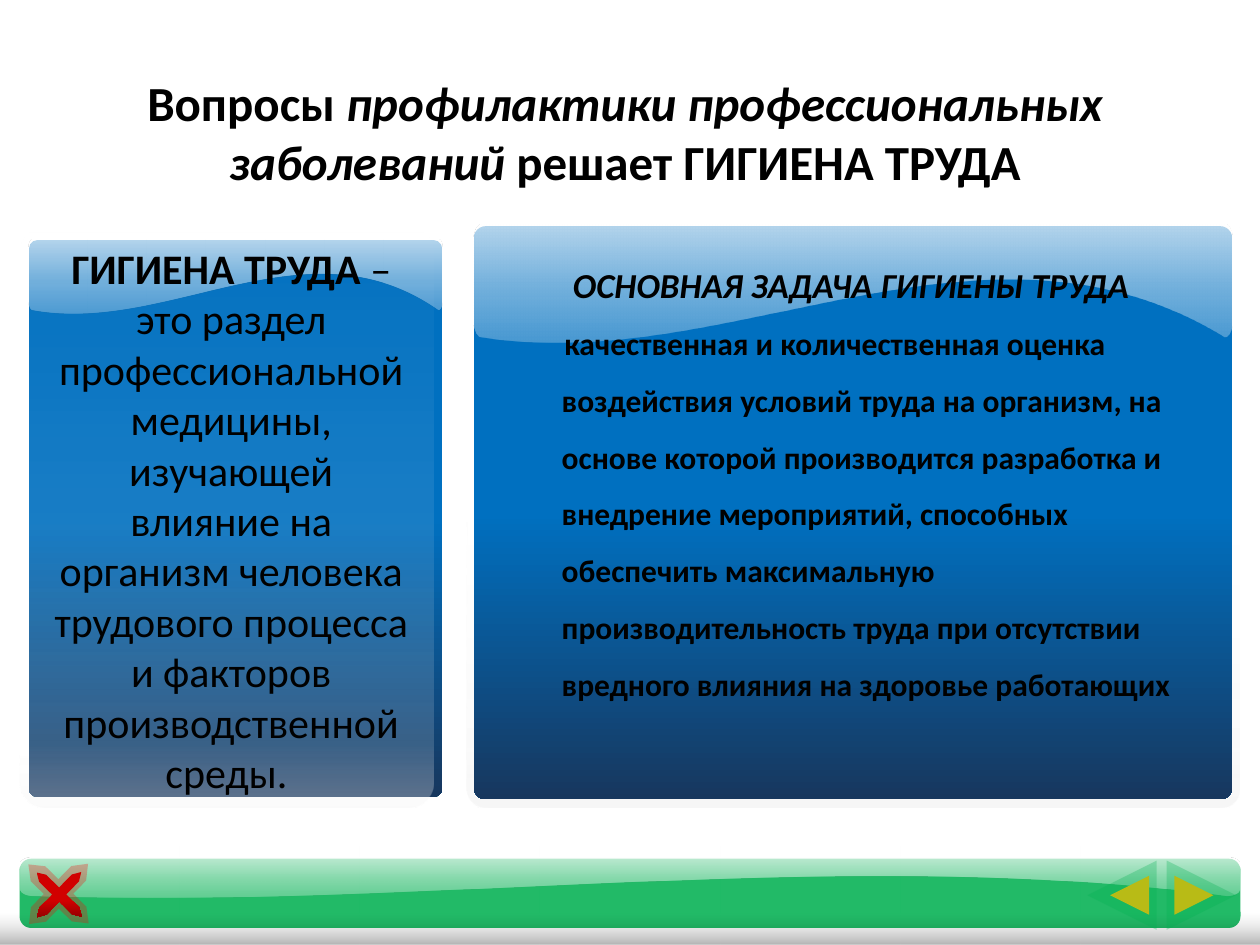
import pptx
import pptx.util
import pptx.dml.color
import pptx.enum.shapes
import pptx.enum.text
import pptx.oxml
import pptx.oxml.ns
from dataclasses import dataclass

KIND = pptx.enum.shapes.MSO_SHAPE
ALIGN = pptx.enum.text.PP_ALIGN
ANCHOR = pptx.enum.text.MSO_ANCHOR
FIT = pptx.enum.text.MSO_AUTO_SIZE


@dataclass(frozen=True)
class Theme:
    font: str = "Calibri"
    ink: str = "000000"
    white: str = "FFFFFF"
    mist: str = "F2F2F2"
    blue: str = "0070C0"
    navy: str = "17375E"
    green: str = "00B050"
    amber: str = "FFC000"
    red: str = "FF0000"
    dark_red: str = "C00000"
    title: int = 28
    definition: int = 24
    heading: int = 20
    body: int = 18


THEME = Theme()

TITLE = [[("Вопросы ", "b"), ("профилактики профессиональных заболеваний ", "bi"),
          ("решает ГИГИЕНА ТРУДА", "b")]]
DEFINITION = [[("ГИГИЕНА ТРУДА ", "b"),
               ("– это раздел профессиональной медицины, изучающей влияние на организм "
                "человека трудового процесса и факторов производственной среды. ", "")]]
TASK_HEADING = [("ОСНОВНАЯ ЗАДАЧА ГИГИЕНЫ ТРУДА", "bi")]
TASK = [("качественная и количественная оценка воздействия условий труда на организм, "
         "на основе которой производится разработка и внедрение мероприятий, способных "
         "обеспечить максимальную производительность труда при отсутствии вредного "
         "влияния на здоровье работающих", "b")]

COLUMNS, ROWS = 100, 75
PANEL_STOPS = [(50, THEME.blue, 100), (100, THEME.navy, 100)]
GLOSS_STOPS = [(0, THEME.white, 17), (50, THEME.white, 46), (100, THEME.white, 85)]
BAR_SHADE = [(0, THEME.white, 13), (68, THEME.white, 13), (100, THEME.ink, 29)]
TASK_HALO = [(0, THEME.white, 0), (50, THEME.white, 25), (100, THEME.mist, 59)]
DEFINITION_HALO = [(0, THEME.white, 0), (89, THEME.white, 16), (100, THEME.mist, 34)]
CROSS_STOPS = [(57, THEME.dark_red, 100), (100, THEME.ink, 100)]

BACKDROP = [
    (KIND.ROUNDED_RECTANGLE, (37, 17, 61.4, 47.1), [0.036], TASK_HALO, 90, 0),
    (KIND.ROUNDED_RECTANGLE, (2.3, 19.05, 32.8, 44.2), [0.021], PANEL_STOPS, 90, 0),
    (KIND.ROUNDED_RECTANGLE, (1.55, 68.15, 96.9, 5.5), [0.167], [(0, THEME.green, 100)], 0, 0),
    (KIND.RECTANGLE, (0, 67.2, 100, 7.8), [], BAR_SHADE, 90, 0),
]
BAR_GLOSS = (1.6, 68.1, 96.8, 3)
TASK_PANEL = (KIND.ROUNDED_RECTANGLE, (37.6, 17.95, 60.2, 45.5), [0.021], PANEL_STOPS, 90, 0)
PANEL_GLOSSES = [(37.6, 17.8, 60.2, 8.9), (2.3, 19, 32.8, 5.6)]
ARROW = [(0, THEME.amber, 100)]
ARROW_HALO = [(0, THEME.green, 28)]
CONTROLS = [
    (KIND.PENTAGON, (93.2, 69.5, 3.1, 3.1), [1.429], ARROW, 0, 0),
    (KIND.PENTAGON, (92.6, 68.3, 5.5, 5.5), [1.429], ARROW_HALO, 0, 0),
    (KIND.PENTAGON, (88.1, 69.5, 3.1, 3.1), [1.429], ARROW, 0, 180),
    (KIND.PENTAGON, (86.3, 68.3, 5.5, 5.5), [1.429], ARROW_HALO, 0, 180),
    (KIND.QUAD_ARROW, (2.2, 68.5, 5, 5), [0.246, 0.079, 0.132], CROSS_STOPS, 45, 44.4),
    (KIND.QUAD_ARROW, (1.3, 67.6, 6.7, 6.7), [0.246, 0.123, 0.159],
     [(0, THEME.red, 28)], 0, 44.4),
    (KIND.ROUNDED_RECTANGLE, (1.6, 18, 32.8, 46.1), [0.065], DEFINITION_HALO, 90, 0),
]

deck = pptx.Presentation()
deck.slide_width = pptx.util.Inches(10)
deck.slide_height = pptx.util.Inches(7.5)
slide = deck.slides.add_slide(deck.slide_layouts[5])


def across(columns):
    return round(deck.slide_width * columns / COLUMNS)


def down(rows):
    return round(deck.slide_height * rows / ROWS)


def place(cell):
    left, top, width, height = cell
    return across(left), down(top), across(width), down(height)


def paint(shape, stops, angle):
    shape.shadow.inherit = False
    shape.line.fill.background()
    shape.fill.solid()
    colours = [f'<a:srgbClr val="{c}"><a:alpha val="{a * 1000}"/></a:srgbClr>'
               for _, c, a in stops]
    space = pptx.oxml.ns.nsdecls("a")
    if len(stops) == 1:
        xml = f"<a:solidFill {space}>{colours[0]}</a:solidFill>"
    else:
        marks = "".join(f'<a:gs pos="{stop[0] * 1000}">{colour}</a:gs>'
                        for stop, colour in zip(stops, colours))
        xml = (f'<a:gradFill {space} rotWithShape="1"><a:gsLst>{marks}</a:gsLst>'
               f'<a:lin ang="{angle * 60000}" scaled="0"/></a:gradFill>')
    properties = shape._element.spPr
    plain = properties.find(pptx.oxml.ns.qn("a:solidFill"))
    properties.replace(plain, pptx.oxml.parse_xml(xml))


def add_preset(kind, cell, adjustments, stops, angle, rotation):
    shape = slide.shapes.add_shape(kind, *place(cell))
    for index, value in enumerate(adjustments):
        shape.adjustments[index] = value
    shape.rotation = rotation
    paint(shape, stops, angle)


def bend(shape, commands):
    lines = list(shape._element.iter(pptx.oxml.ns.qn("a:lnTo")))
    for command in commands:
        first = lines.pop(0)
        if command == "C":
            cubic = pptx.oxml.parse_xml(
                f'<a:cubicBezTo {pptx.oxml.ns.nsdecls("a")}/>')
            first.addprevious(cubic)
            for line in (first, lines.pop(0), lines.pop(0)):
                cubic.append(line[0])
                line.getparent().remove(line)


def add_gloss(left, top, width, height):
    inset, drop = 0.011, 1 / 6
    profile = (0, 0, 0.1, 0.29, 0.47, 0.73, 1)
    corner = [(inset * x, drop * y) for x, y in zip(profile, profile[::-1])]
    top_right = [(1 - x, y) for x, y in corner[::-1]]
    bottom_right = [(1 - x, 1 - y) for x, y in corner]
    bottom_left = [(x, 1 - y) for x, y in corner[::-1]]
    wave = [(0.67, -0.31), (0.34, 1.35)]
    outline = corner + top_right + bottom_right + wave + bottom_left
    points = [(across(left + x * width), down(top + y * height)) for x, y in outline]
    builder = slide.shapes.build_freeform(*points[0])
    builder.add_line_segments(points[1:], close=True)
    gloss = builder.convert_to_shape()
    bend(gloss, "CCLCCLCCCCC")
    paint(gloss, GLOSS_STOPS, 270)


def write(frame, paragraphs, sizes, aligns=(ALIGN.CENTER,), anchor=ANCHOR.TOP,
          fit=FIT.NONE, spacing=1.0, indents=((0, 0),)):
    frame.word_wrap = True
    frame.auto_size = fit
    frame.vertical_anchor = anchor
    for number, runs in enumerate(paragraphs):
        paragraph = frame.add_paragraph() if number else frame.paragraphs[0]
        paragraph.alignment = aligns[number]
        paragraph.line_spacing = spacing
        margin, indent = indents[number]
        properties = paragraph._p.get_or_add_pPr()
        properties.set("marL", str(across(margin)))
        properties.set("indent", str(across(indent)))
        for words, style in runs:
            run = paragraph.add_run()
            run.text = words
            run.font.name = THEME.font
            run.font.size = pptx.util.Pt(sizes[number])
            run.font.bold = "b" in style
            run.font.italic = "i" in style
            run.font.color.rgb = pptx.dml.color.RGBColor.from_string(THEME.ink)


for item in BACKDROP:
    add_preset(*item)
add_gloss(*BAR_GLOSS)
add_preset(*TASK_PANEL)
for cell in PANEL_GLOSSES:
    add_gloss(*cell)
for item in CONTROLS:
    add_preset(*item)

task = slide.shapes.add_textbox(*place((39.8, 18.75, 55.5, 43.5)))
write(task.text_frame, [TASK_HEADING, TASK], [THEME.heading, THEME.body],
      aligns=(ALIGN.CENTER, ALIGN.LEFT), spacing=1.5, indents=((3.8, -3.8), (3.8, 0.2)))

title = slide.shapes.title
title.left, title.top, title.width, title.height = place((3.1, 3.9, 93, 11.7))
write(title.text_frame, TITLE, [THEME.title], anchor=ANCHOR.BOTTOM)

definition = slide.shapes.add_textbox(*place((3.1, 18.75, 30.5, 45.4)))
write(definition.text_frame, DEFINITION, [THEME.definition], fit=FIT.SHAPE_TO_FIT_TEXT)

deck.save("out.pptx")
